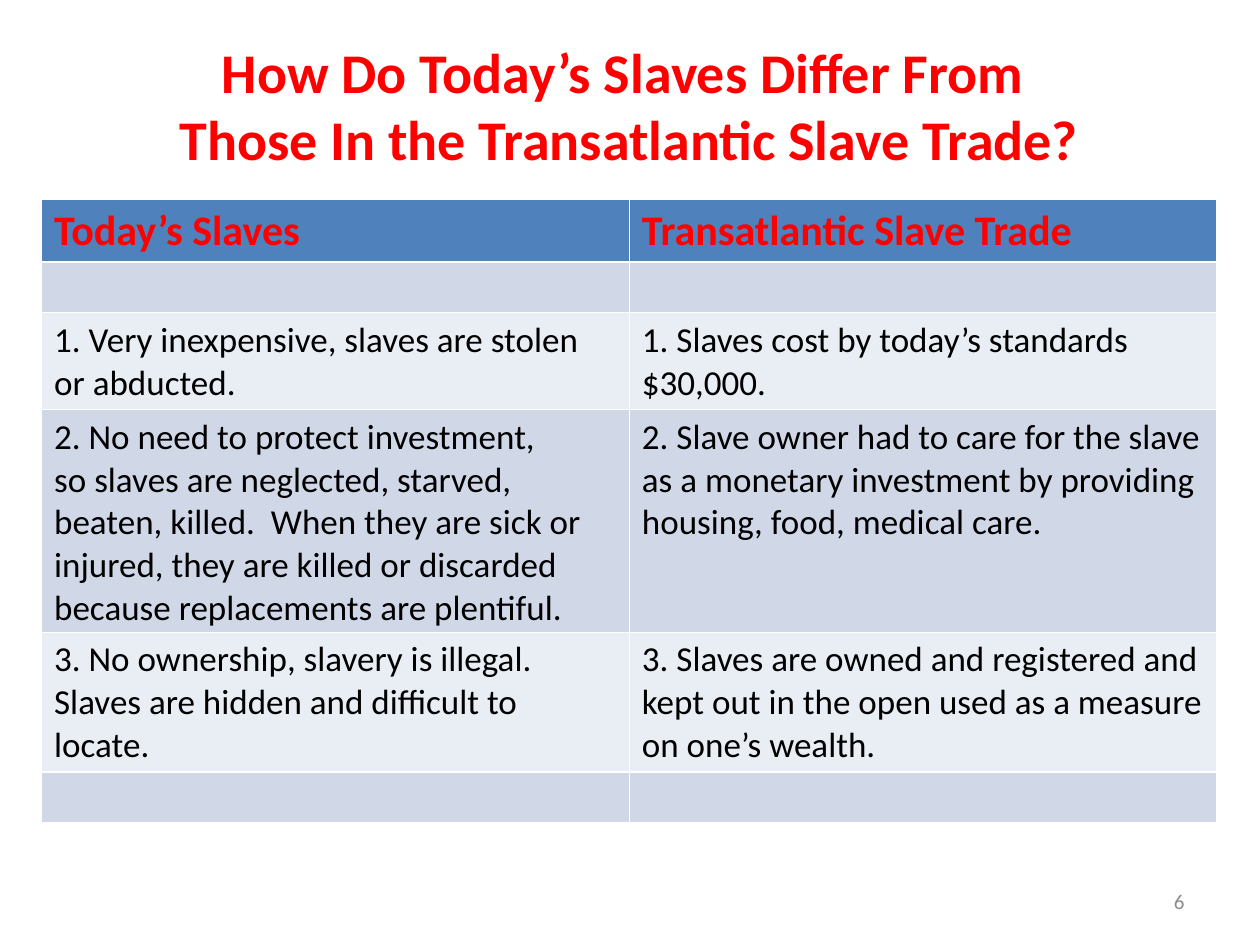
import pptx
import pptx.dml.color
import pptx.enum.text
import pptx.util

Inches = pptx.util.Inches
ALIGN = pptx.enum.text.PP_ALIGN
ANCHOR = pptx.enum.text.MSO_ANCHOR

TITLE = "How Do Today’s Slaves Differ From \nThose In the Transatlantic Slave Trade?"
PAGE_NUMBER = "6"
ROWS = [
    ("Today’s Slaves", "Transatlantic Slave Trade"),
    ("", ""),
    ("1. Very inexpensive, slaves are stolen or abducted.",
     "1. Slaves cost by today’s standards $30,000."),
    ("2. No need to protect investment, \nso slaves are neglected, starved, beaten, killed.  "
     "When they are sick or injured, they are killed or discarded because replacements "
     "are plentiful.",
     "2. Slave owner had to care for the slave as a monetary investment by providing "
     "housing, food, medical care."),
    ("3. No ownership, slavery is illegal. Slaves are hidden and difficult to locate.",
     "3. Slaves are owned and registered and kept out in the open used as a measure "
     "on one’s wealth."),
    ("", ""),
]
ROW_HEIGHTS = [0.5, 0.4, 0.77, 1.76, 1.11, 0.4]
HEADER_FILL = "4F81BD"
BAND_FILLS = ["E9EDF4", "D0D8E8"]
RED, BLACK, GREY = "FF0000", "000000", "8C8C8C"
LEFT, WIDTH = 0.33, 9.33


def rgb(value):
    return pptx.dml.color.RGBColor.from_string(value)


def write(tf, text, size, color, bold=False, align=None):
    """Fill the first paragraph, turning newlines into line breaks."""
    p = tf.paragraphs[0]
    p.alignment = align
    for i, line in enumerate(text.split("\n")):
        if i:
            p.add_line_break()
        r = p.add_run()
        r.text = line
        r.font.name = "Calibri"
        r.font.size = pptx.util.Pt(size)
        r.font.bold = bold
        r.font.color.rgb = rgb(color)


def add_text(s, box, anchor, *args, **kwargs):
    tf = s.shapes.add_textbox(*map(Inches, box)).text_frame
    tf.word_wrap = True
    tf.vertical_anchor = anchor
    write(tf, *args, **kwargs)


def add_comparison(s):
    frame = s.shapes.add_table(len(ROWS), 2, Inches(LEFT), Inches(1.58),
                               Inches(WIDTH), Inches(sum(ROW_HEIGHTS)))
    table = frame.table
    for i, (texts, height) in enumerate(zip(ROWS, ROW_HEIGHTS)):
        table.rows[i].height = Inches(height)
        header = i == 0
        for j, text in enumerate(texts):
            cell = table.cell(i, j)
            cell.fill.solid()
            cell.fill.fore_color.rgb = rgb(HEADER_FILL if header else BAND_FILLS[i % 2])
            if text:
                write(cell.text_frame, text, 24 if header else 20,
                      RED if header else BLACK, bold=header)


prs = pptx.Presentation()
prs.slide_width, prs.slide_height = Inches(10), Inches(7.5)
s = prs.slides.add_slide(prs.slide_layouts[6])
add_text(s, (7.17, 6.95, 2.33, 0.4), ANCHOR.MIDDLE, PAGE_NUMBER, 12, GREY, align=ALIGN.RIGHT)
add_text(s, (LEFT, 0.25, WIDTH, 1.18), ANCHOR.TOP, TITLE, 32, RED, bold=True, align=ALIGN.CENTER)
add_comparison(s)
prs.save("out.pptx")
